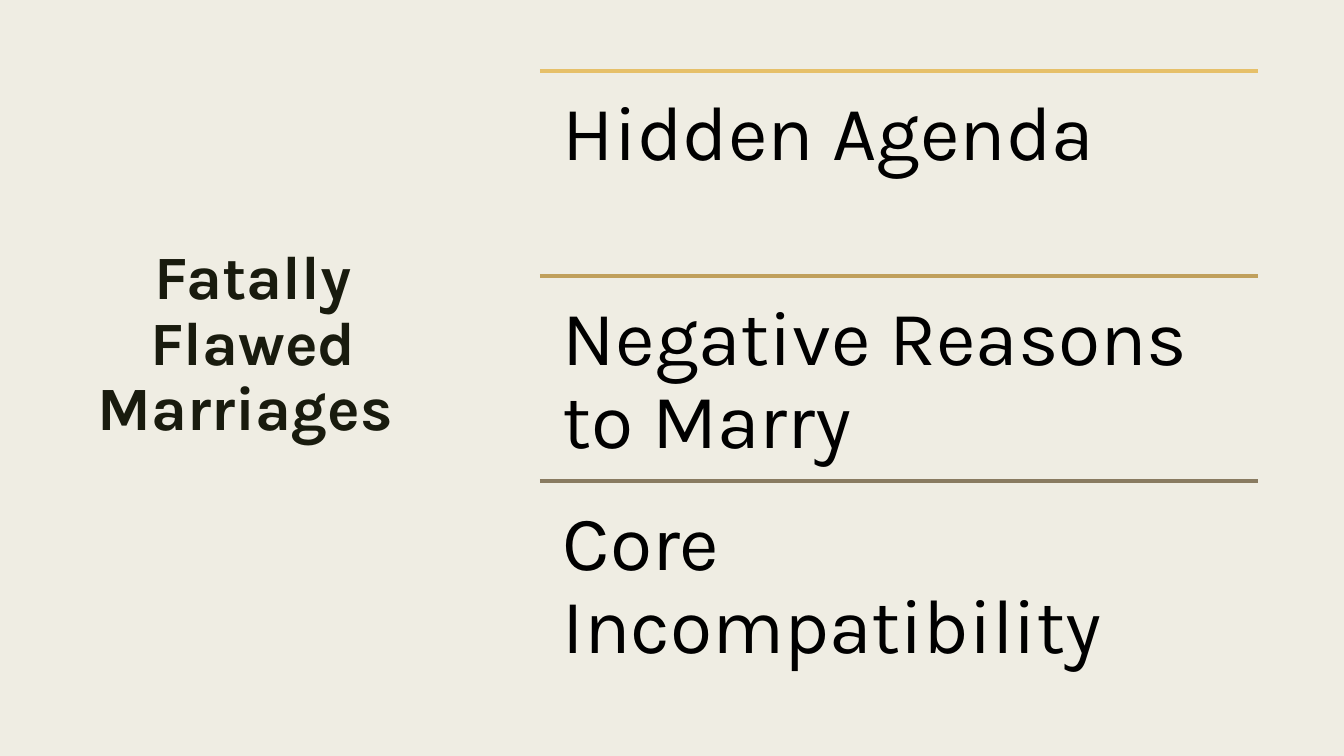
"""Build the Fatally Flawed Marriages slide."""
from pptx import Presentation
from pptx.dml.color import RGBColor
from pptx.enum.shapes import MSO_CONNECTOR
from pptx.enum.text import MSO_ANCHOR, PP_ALIGN
from pptx.oxml import parse_xml
from pptx.oxml.ns import nsdecls
from pptx.util import Emu, Pt

TITLE = "Fatally Flawed Marriages "
ITEMS = [
    ("Hidden Agenda", "gold"),
    ("Negative Reasons to Marry", "ochre"),
    ("Core Incompatibility", "taupe"),
]
COLORS = {"paper": "EFEDE3", "ink": "191B0E", "black": "000000",
          "gold": "E6C069", "ochre": "C0A05C", "taupe": "897B61"}
FONT = "Karla"
TITLE_BOX = (71, 71, 364, 549)
LIST_BOX = (540, 71, 718, 615)
TITLE_STYLE = {"size": 44, "color": "ink", "bold": True, "spacing": 0.89,
               "align": PP_ALIGN.CENTER, "anchor": MSO_ANCHOR.MIDDLE,
               "insets": (10, 5)}
ITEM_STYLE = {"size": 55, "color": "black", "bold": False, "spacing": 0.9,
              "align": PP_ALIGN.LEFT, "anchor": MSO_ANCHOR.TOP,
              "insets": (23, 23)}


def px(n):
    return Emu(round(n * 914400 / 100.8))


def rgb(name):
    return RGBColor.from_string(COLORS[name])


def add_text(s, text, box, style):
    tf = s.shapes.add_textbox(*map(px, box)).text_frame
    side, edge = map(px, style["insets"])
    frame = {"word_wrap": True, "vertical_anchor": style["anchor"],
             "margin_left": side, "margin_right": side,
             "margin_top": edge, "margin_bottom": edge}
    for name, value in frame.items():
        setattr(tf, name, value)
    p = tf.paragraphs[0]
    p.alignment, p.line_spacing = style["align"], style["spacing"]
    r = p.add_run()
    r.text = text
    font = {"name": FONT, "size": Pt(style["size"]), "bold": style["bold"]}
    for name, value in font.items():
        setattr(r.font, name, value)
    r.font.color.rgb = rgb(style["color"])


def add_rule(s, x, y, w, color):
    ends = map(px, (x, y, x + w, y))
    sp = s.shapes.add_connector(MSO_CONNECTOR.STRAIGHT, *ends)
    sp.line.color.rgb = rgb(color)
    sp.line.width = Pt(2.75)
    sp._element.spPr.append(parse_xml(f"<a:effectLst {nsdecls('a')}/>"))


def main():
    prs = Presentation()
    prs.slide_width, prs.slide_height = px(1344), px(756)
    s = prs.slides.add_slide(prs.slide_layouts[6])
    s.background.fill.solid()
    s.background.fill.fore_color.rgb = rgb("paper")
    add_text(s, TITLE, TITLE_BOX, TITLE_STYLE)
    x, top, w, h = LIST_BOX
    step = h / len(ITEMS)
    for i, (text, color) in enumerate(ITEMS):
        y = top + i * step
        add_rule(s, x, y, w, color)
        add_text(s, text, (x, y, w, step), ITEM_STYLE)
    prs.save("out.pptx")


if __name__ == "__main__":
    main()
